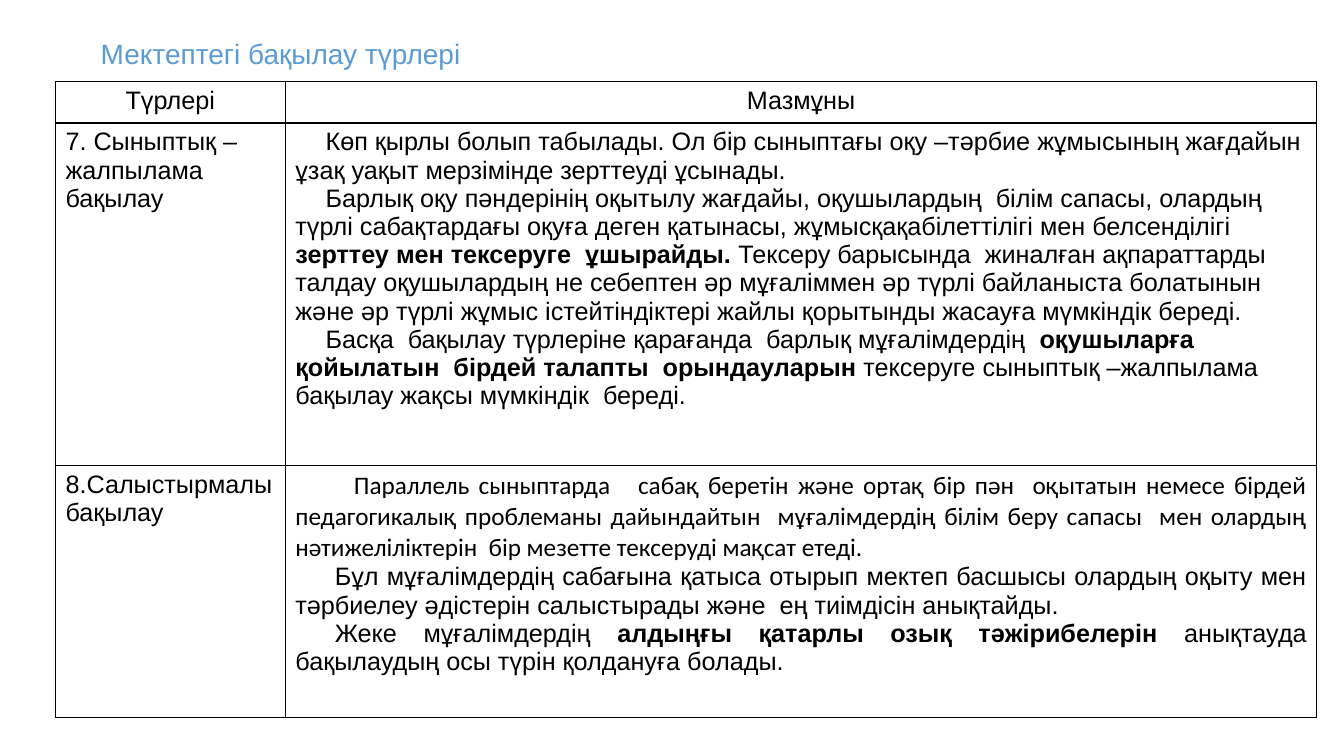
"""Builds a slide with a table of school inspection types."""
from lxml import etree
from pptx import Presentation, util as u
from pptx.dml.color import RGBColor
from pptx.enum import text
from pptx.oxml.ns import qn

EMU_PER_PX = 9144
COLORS = {"title": "5B9BD5", "ink": "000000", "paper": "FFFFFF"}
CENTER, JUSTIFY = text.PP_ALIGN.CENTER, text.PP_ALIGN.JUSTIFY

HEADERS = ["Түрлері", "Мазмұны"]
CLASS_REVIEW = [
    "Көп қырлы болып табылады. Ол бір сыныптағы оқу –тәрбие жұмысының жағдайын "
    "ұзақ уақыт мерзімінде зерттеуді ұсынады.",
    "Барлық оқу пәндерінің оқытылу жағдайы, оқушылардың  білім сапасы, олардың "
    "түрлі сабақтардағы оқуға деген қатынасы, жұмысқақабілеттілігі мен белсенділігі "
    "**зерттеу мен тексеруге  ұшырайды. **Тексеру барысында  жиналған ақпараттарды "
    "талдау оқушылардың не себептен әр мұғаліммен әр түрлі байланыста болатынын "
    "және әр түрлі жұмыс істейтіндіктері жайлы қорытынды жасауға мүмкіндік береді.",
    "Басқа  бақылау түрлеріне қарағанда  барлық мұғалімдердің  **оқушыларға "
    "қойылатын  бірдей талапты  орындауларын **тексеруге сыныптық –жалпылама "
    "бақылау жақсы мүмкіндік  береді.",
]
COMPARISON_INTRO = [
    "Параллель сыныптарда   сабақ беретін және ортақ бір пән  оқытатын немесе бірдей "
    "педагогикалық проблеманы дайындайтын  мұғалімдердің білім беру сапасы  мен олардың "
    "нәтижеліліктерін  бір мезетте тексеруді мақсат етеді.",
]
COMPARISON = [
    "Бұл мұғалімдердің сабағына қатыса отырып мектеп басшысы олардың оқыту мен "
    "тәрбиелеу әдістерін салыстырады және  ең тиімдісін анықтайды.",
    "Жеке мұғалімдердің **алдыңғы қатарлы озық тәжірибелерін **анықтауда "
    "бақылаудың осы түрін қолдануға болады.",
]


def px(n):
    return u.Emu(n * EMU_PER_PX)


class Deck:
    """Holds the style and the current slide."""

    def __init__(self, width, height):
        self.prs = Presentation()
        self.prs.slide_width, self.prs.slide_height = px(width), px(height)
        self.s = self.prs.slides.add_slide(self.prs.slide_layouts[6])

    def paragraphs(self, tf, lines, size=18, color="ink", font="Arial",
                   align=None, indent=0, append=False):
        """Adds paragraphs, with ** around bold parts."""
        for i, line in enumerate(lines):
            p = tf.add_paragraph() if append or i else tf.paragraphs[0]
            p.alignment = align
            if indent:
                pPr = p._p.get_or_add_pPr()
                pPr.set("marL", "0")
                pPr.set("indent", str(px(indent)))
            for j, part in enumerate(line.split("**")):
                r = p.add_run()
                r.text = part
                r.font.name, r.font.size = font, u.Pt(size)
                r.font.bold = j % 2 == 1
                r.font.color.rgb = RGBColor.from_string(COLORS[color])

    def title(self, line, x, y, w, h):
        """Adds the heading."""
        tf = self.s.shapes.add_textbox(px(x), px(y), px(w), px(h)).text_frame
        tf.word_wrap = True
        tf.vertical_anchor = text.MSO_ANCHOR.MIDDLE
        self.paragraphs(tf, [line], size=20, color="title")

    def table(self, x, y, cols, rows):
        """Adds an empty ruled table."""
        t = self.s.shapes.add_table(len(rows), len(cols), px(x), px(y),
                                    px(sum(cols)), px(sum(rows))).table
        t.first_row = t.horz_banding = False
        for col, w in zip(t.columns, cols):
            col.width = px(w)
        for row, h in zip(t.rows, rows):
            row.height = px(h)
        for cell in t.iter_cells():
            self.rule(cell)
            cell.fill.solid()
            cell.fill.fore_color.rgb = RGBColor.from_string(COLORS["paper"])
        return t

    def rule(self, cell):
        """Draws the four borders of a cell."""
        tcPr = cell._tc.get_or_add_tcPr()
        for side in "LRTB":
            ln = etree.SubElement(tcPr, qn(f"a:ln{side}"), w=str(u.Pt(1)))
            fill = etree.SubElement(ln, qn("a:solidFill"))
            etree.SubElement(fill, qn("a:srgbClr"), val=COLORS["ink"])


def main():
    deck = Deck(1333, 750)
    deck.title("Мектептегі бақылау түрлері", 90, 24, 1141, 57)
    t = deck.table(55, 81, [228, 1023], [41, 340, 250])
    for i, header in enumerate(HEADERS):
        deck.paragraphs(t.cell(0, i).text_frame, [header], align=CENTER)
    deck.paragraphs(t.cell(1, 0).text_frame, ["7. Сыныптық –жалпылама бақылау"])
    deck.paragraphs(t.cell(1, 1).text_frame, CLASS_REVIEW, indent=30)
    deck.paragraphs(t.cell(2, 0).text_frame, ["8.Салыстырмалы бақылау"])
    tf = t.cell(2, 1).text_frame
    deck.paragraphs(tf, COMPARISON_INTRO, font="Calibri", align=JUSTIFY, indent=58)
    deck.paragraphs(tf, COMPARISON, align=JUSTIFY, indent=39, append=True)
    deck.prs.save("out.pptx")


if __name__ == "__main__":
    main()
